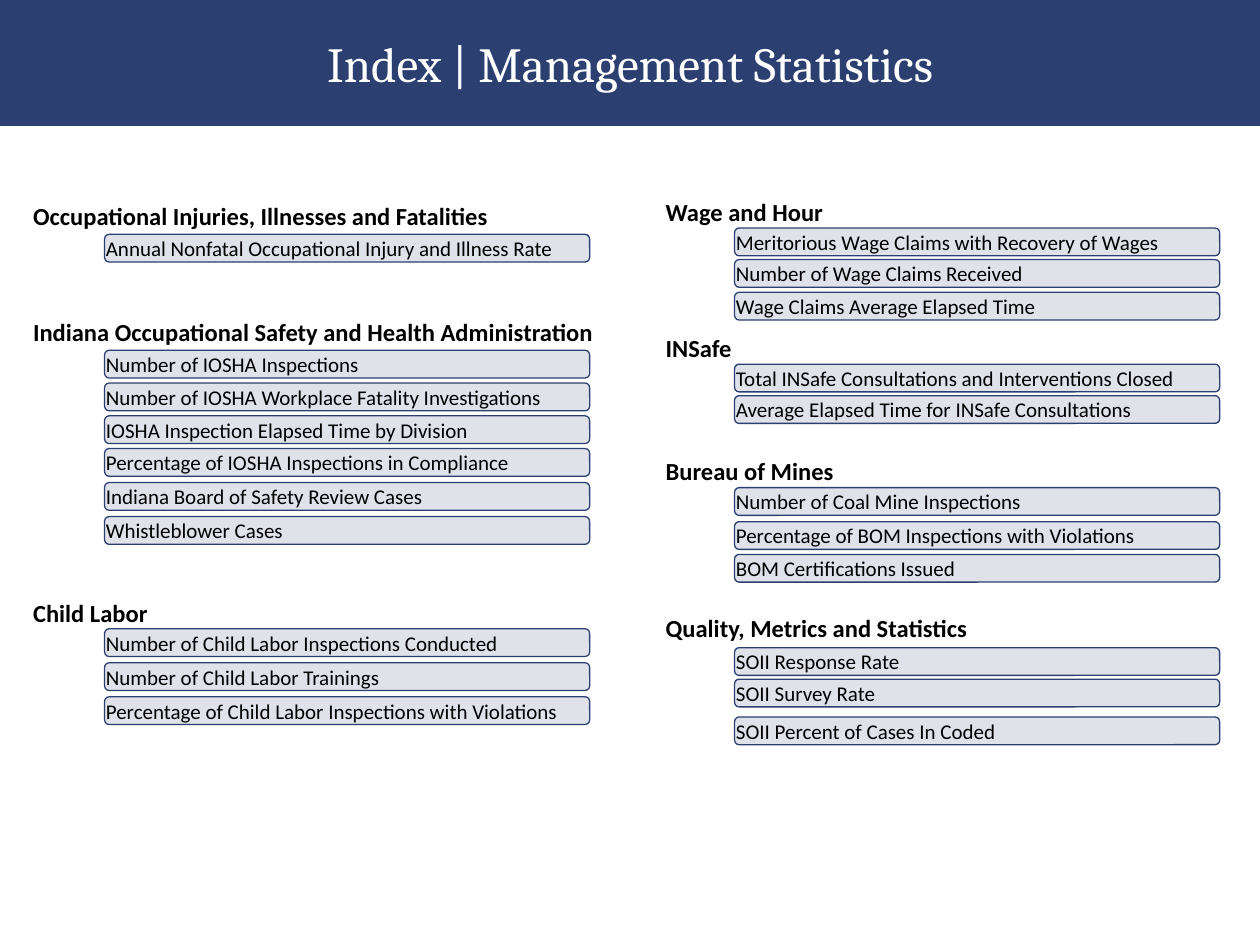
from lxml import etree
from pptx import Presentation
from pptx.dml.color import RGBColor
from pptx.enum.shapes import MSO_SHAPE
from pptx.enum.text import MSO_ANCHOR, MSO_AUTO_SIZE, PP_ALIGN
from pptx.oxml.ns import qn
from pptx.util import Inches, Pt

ROUNDED = MSO_SHAPE.ROUNDED_RECTANGLE
TOP, MIDDLE = MSO_ANCHOR.TOP, MSO_ANCHOR.MIDDLE
FIT_SHAPE, FIXED = MSO_AUTO_SIZE.SHAPE_TO_FIT_TEXT, MSO_AUTO_SIZE.NONE
LEFT, CENTER = PP_ALIGN.LEFT, PP_ALIGN.CENTER
TITLE_ONLY = 5
COLUMNS, ROWS = 100, 75


def color(hex_string):
    return RGBColor.from_string(hex_string)


class IndexPage:
    navy, black, white = "2C3F71", "000000", "FFFFFF"
    heading_font, body_font = "Cambria", "Calibri"
    entry_width, entry_height, heading_height = 38.5, 2.2, 2.6

    def __init__(self, deck):
        self.page = deck.slides.add_slide(deck.slide_layouts[TITLE_ONLY])
        self.column = deck.slide_width / COLUMNS
        self.row = deck.slide_height / ROWS

    def place(self, left, top, width, height):
        return (round(left * self.column), round(top * self.row),
                round(width * self.column), round(height * self.row))

    def set_text(self, box, text, size, font, ink, align, anchor, fit, bold=False):
        frame = box.text_frame
        frame.text = text
        frame.word_wrap = True
        frame.auto_size = fit
        frame.vertical_anchor = anchor
        para = frame.paragraphs[0]
        para.alignment = align
        span = para.runs[0].font
        span.name, span.size, span.bold = font, Pt(size), bold
        span.color.rgb = color(ink)

    def title(self, text):
        box = self.page.shapes.title
        box.left, box.top, box.width, box.height = self.place(0, 0, COLUMNS, 10)
        box.fill.solid()
        box.fill.fore_color.rgb = color(self.navy)
        self.set_text(box, text, 28, self.heading_font, self.white, CENTER, MIDDLE, FIXED)

    def label(self, text, area, size, bold):
        box = self.page.shapes.add_shape(ROUNDED, *self.place(*area))
        box.shadow.inherit = False
        frame = box.text_frame
        frame.margin_left = frame.margin_right = 0
        frame.margin_top = frame.margin_bottom = 0
        self.set_text(box, text, size, self.body_font, self.black, LEFT, TOP, FIT_SHAPE, bold)
        return box

    def heading(self, text, left, top, width):
        box = self.label(text, (left, top, width, self.heading_height), 14, True)
        box.fill.background()
        box.line.fill.background()

    def entry(self, text, left, top):
        box = self.label(text, (left, top, self.entry_width, self.entry_height), 12, False)
        box.fill.solid()
        box.fill.fore_color.rgb = color(self.navy)
        tint = box.element.spPr.find(qn("a:solidFill"))[0]
        etree.SubElement(tint, qn("a:alpha"), val="15000")
        box.line.color.rgb = color(self.navy)
        box.line.width = Pt(0.75)


LEFT_GROUPS = [
    ("Occupational Injuries, Illnesses and Fatalities", 15.8, 38.5, [
        (18.6, "Annual Nonfatal Occupational Injury and Illness Rate")]),
    ("Indiana Occupational Safety and Health Administration", 25, 45, [
        (27.8, "Number of IOSHA Inspections"),
        (30.4, "Number of IOSHA Workplace Fatality Investigations"),
        (33, "IOSHA Inspection Elapsed Time by Division"),
        (35.6, "Percentage of IOSHA Inspections in Compliance"),
        (38.3, "Indiana Board of Safety Review Cases"),
        (41, "Whistleblower Cases")]),
    ("Child Labor", 47.3, 38.5, [
        (49.9, "Number of Child Labor Inspections Conducted"),
        (52.6, "Number of Child Labor Trainings"),
        (55.3, "Percentage of Child Labor Inspections with Violations")]),
]
RIGHT_GROUPS = [
    ("Wage and Hour", 15.5, 38.5, [
        (18.1, "Meritorious Wage Claims with Recovery of Wages"),
        (20.6, "Number of Wage Claims Received"),
        (23.2, "Wage Claims Average Elapsed Time")]),
    ("INSafe", 26.3, 38.5, [
        (28.9, "Total INSafe Consultations and Interventions Closed"),
        (31.4, "Average Elapsed Time for INSafe Consultations")]),
    ("Bureau of Mines", 36.1, 38.5, [
        (38.7, "Number of Coal Mine Inspections"),
        (41.4, "Percentage of BOM Inspections with Violations"),
        (44, "BOM Certifications Issued")]),
    ("Quality, Metrics and Statistics", 48.5, 38.5, [
        (51.4, "SOII Response Rate"),
        (53.9, "SOII Survey Rate"),
        (56.9, "SOII Percent of Cases In Coded")]),
]


def main():
    deck = Presentation()
    deck.slide_width, deck.slide_height = Inches(10), Inches(7.5)
    index = IndexPage(deck)
    index.title("Index | Management Statistics")
    sides = [(2.5, 8.3, LEFT_GROUPS), (52.7, 58.3, RIGHT_GROUPS)]
    for heading_left, entry_left, groups in sides:
        for heading, top, width, entries in groups:
            index.heading(heading, heading_left, top, width)
            for entry_top, text in entries:
                index.entry(text, entry_left, entry_top)
    deck.save("out.pptx")


if __name__ == "__main__":
    main()
